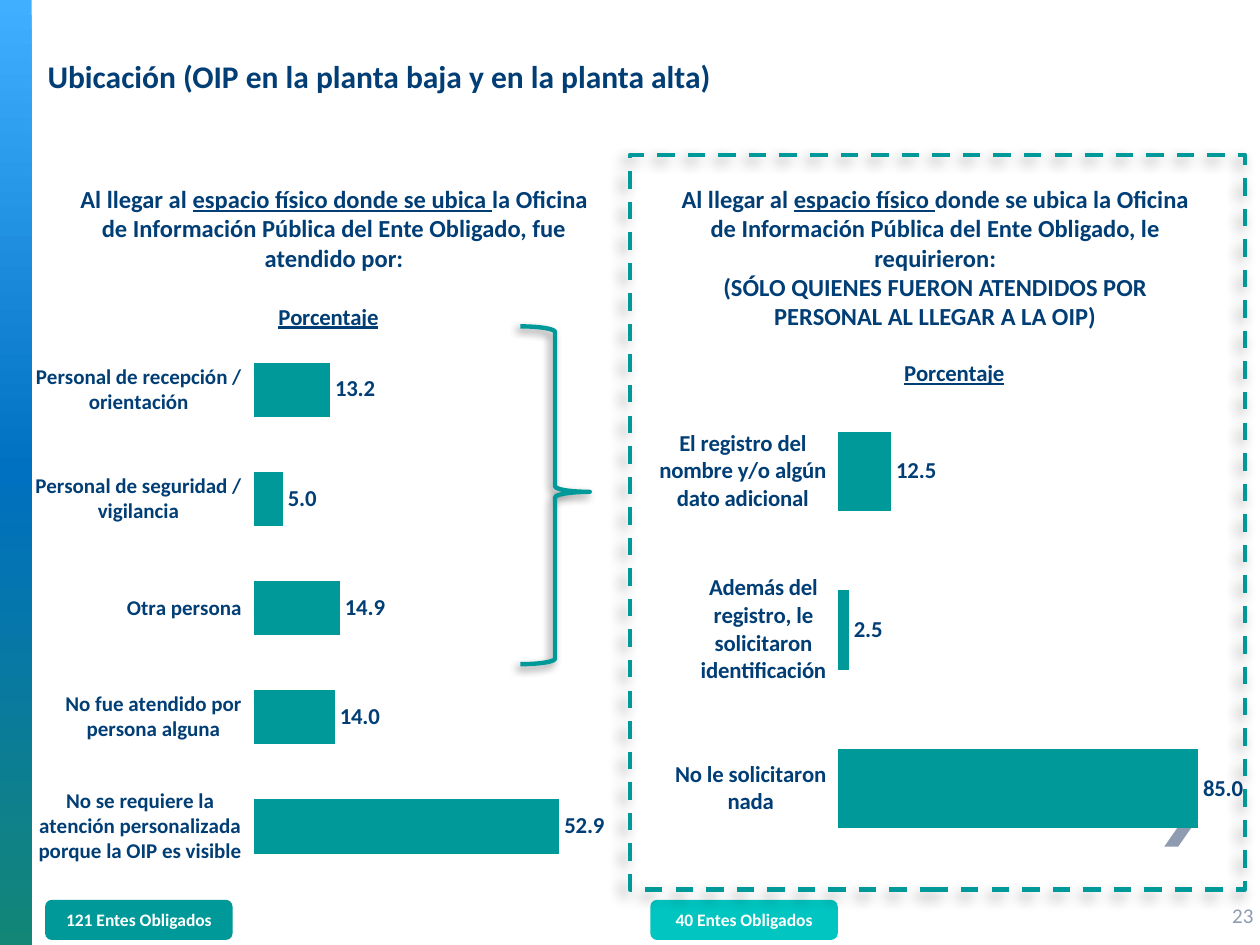
import dataclasses

import pptx
import pptx.chart.data
import pptx.dml.color
import pptx.enum.chart
import pptx.enum.dml
import pptx.enum.shapes
import pptx.enum.text
import pptx.oxml
import pptx.oxml.ns
import pptx.util

Cm = pptx.util.Cm
Pt = pptx.util.Pt
SHAPE = pptx.enum.shapes.MSO_SHAPE
ALIGN = pptx.enum.text.PP_ALIGN
MIDDLE = pptx.enum.text.MSO_ANCHOR.MIDDLE


@dataclasses.dataclass(frozen=True)
class Theme:
    font: str = "Calibri"
    navy: str = "003E75"
    teal: str = "009999"
    aqua: str = "00C5C0"
    grey: str = "8E9BB0"
    white: str = "FFFFFF"
    band: tuple = ((0, "40AFFF"), (50, "0070C0"), (100, "138677"))
    title_size: int = 18
    question_size: int = 14
    value_size: int = 13
    number_size: int = 12
    pill_size: int = 10
    outline: float = 2.5


THEME = Theme()


def rgb(color):
    return pptx.dml.color.RGBColor.from_string(color)


def xml(markup):
    """Parse markup whose root tag ends with the marker NS."""
    return pptx.oxml.parse_xml(markup.replace("NS", pptx.oxml.ns.nsdecls("a", "c"), 1))


def style_font(font, size, color=THEME.navy, bold=True):
    font.name = THEME.font
    font.size = Pt(size)
    font.bold = bold
    font.color.rgb = rgb(color)


def write_paragraph(paragraph, runs, size, color=THEME.navy, bold=True, align=ALIGN.LEFT):
    """Write (text, underlined) runs that share one font."""
    paragraph.alignment = align
    style_font(paragraph.font, size, color, bold)
    for text, underlined in runs:
        run = paragraph.add_run()
        run.text = text
        if underlined:
            run.font.underline = True


def add_text(slide, box, paragraphs, size, anchor=None, side_inset=0.25, **style):
    frame = slide.shapes.add_textbox(*map(Cm, box)).text_frame
    frame.word_wrap = True
    frame.margin_left = frame.margin_right = Cm(side_inset)
    if anchor is not None:
        frame.vertical_anchor = anchor
    for index, runs in enumerate(paragraphs):
        paragraph = frame.add_paragraph() if index else frame.paragraphs[0]
        write_paragraph(paragraph, runs, size, **style)


def add_side_band(slide):
    band = slide.shapes.add_shape(SHAPE.RECTANGLE, 0, 0, Cm(0.64), Cm(19.05))
    band.shadow.inherit = False
    band.line.fill.background()
    band.fill.gradient()
    band.fill.gradient_angle = 270
    stops = band._element.spPr.find(".//" + pptx.oxml.ns.qn("a:gsLst"))
    for stop in list(stops):
        stops.remove(stop)
    for position, color in THEME.band:
        stops.append(xml(f'<a:gs NS pos="{position * 1000}"><a:srgbClr val="{color}"/></a:gs>'))


def add_chevron(slide):
    outline = [(23.75, 15.88), (23.47, 15.88), (23.88, 16.48), (23.47, 17.07),
               (23.75, 17.07), (24.16, 16.48)]
    start, *others = [(Cm(x), Cm(y)) for x, y in outline]
    builder = slide.shapes.build_freeform(*start)
    builder.add_line_segments(others, close=True)
    chevron = builder.convert_to_shape()
    chevron.shadow.inherit = False
    chevron.fill.solid()
    chevron.fill.fore_color.rgb = rgb(THEME.grey)
    chevron.line.fill.background()


def add_outline(slide, kind, box, alpha, blur, distance):
    """Add an unfilled teal shape with a shadow towards the lower left."""
    shape = slide.shapes.add_shape(kind, *map(Cm, box))
    shape.fill.background()
    shape.line.color.rgb = rgb(THEME.teal)
    shape.line.width = Pt(THEME.outline)
    shape.shadow.inherit = False
    effects = shape._element.spPr.find(pptx.oxml.ns.qn("a:effectLst"))
    effects.append(xml(
        f'<a:outerShdw NS blurRad="{Pt(blur)}" dist="{Pt(distance)}" dir="8100000" '
        f'algn="tr" rotWithShape="0"><a:srgbClr val="000000">'
        f'<a:alpha val="{alpha * 1000}"/></a:srgbClr></a:outerShdw>'))
    return shape


def add_pill(slide, left, text, color):
    pill = slide.shapes.add_shape(
        SHAPE.ROUNDED_RECTANGLE, Cm(left), Cm(18.14), Cm(3.78), Cm(0.81))
    pill.shadow.inherit = False
    pill.fill.solid()
    pill.fill.fore_color.rgb = rgb(color)
    pill.line.fill.background()
    pill.text_frame.vertical_anchor = MIDDLE
    write_paragraph(pill.text_frame.paragraphs[0], [(text, False)],
                    THEME.pill_size, THEME.white, align=ALIGN.CENTER)


def place_plot(chart, fractions):
    """Fix the inner plot area and leave the chart background clear."""
    plot_area = chart._chartSpace.chart.plotArea
    for layout in plot_area.findall(pptx.oxml.ns.qn("c:layout")):
        plot_area.remove(layout)
    sizes = "".join(f'<c:{tag} val="{value}"/>' for tag, value in zip("xywh", fractions))
    plot_area.insert(0, xml(
        '<c:layout NS><c:manualLayout><c:layoutTarget val="inner"/>'
        f'<c:xMode val="edge"/><c:yMode val="edge"/>{sizes}</c:manualLayout></c:layout>'))
    chart._chartSpace.chart.addnext(xml(
        '<c:spPr NS><a:noFill/><a:ln><a:noFill/></a:ln></c:spPr>'))


def add_percent_chart(slide, box, answers, plot_fractions, maximum, category_size):
    data = pptx.chart.data.CategoryChartData(number_format="###0.0")
    data.categories = [answer for answer, _ in answers]
    data.add_series("Porcentaje", [percent for _, percent in answers])
    chart = slide.shapes.add_chart(
        pptx.enum.chart.XL_CHART_TYPE.BAR_CLUSTERED, *map(Cm, box), data).chart
    style_font(chart.font, THEME.value_size)
    chart.has_legend = False
    chart.has_title = True
    heading = chart.chart_title.text_frame.paragraphs[0]
    write_paragraph(heading, [("Porcentaje", True)], THEME.value_size, align=ALIGN.CENTER)
    chart.chart_title.include_in_layout = False
    place_plot(chart, plot_fractions)

    chart.category_axis.format.line.fill.background()
    style_font(chart.category_axis.tick_labels.font, category_size)
    percent_axis = chart.value_axis
    percent_axis.minimum_scale = 0
    percent_axis.maximum_scale = maximum
    percent_axis.has_major_gridlines = False
    percent_axis.visible = False

    plot = chart.plots[0]
    plot.gap_width = 100
    plot.vary_by_categories = False
    bars = plot.series[0].format
    bars.fill.solid()
    bars.fill.fore_color.rgb = rgb(THEME.teal)
    plot.has_data_labels = True
    labels = plot.data_labels
    labels.show_value = True
    labels.number_format = "###0.0"
    labels.number_format_is_linked = False
    labels.position = pptx.enum.chart.XL_LABEL_POSITION.OUTSIDE_END
    style_font(labels.font, THEME.value_size)


def main():
    deck = pptx.Presentation()
    deck.slide_width, deck.slide_height = Cm(25.4), Cm(19.05)
    slide = deck.slides.add_slide(deck.slide_layouts[6])

    add_side_band(slide)
    add_chevron(slide)
    add_text(slide, (24.84, 17.93, 0.56, 1.02), [[("23", False)]], THEME.number_size,
             anchor=MIDDLE, side_inset=0, color=THEME.grey, bold=False)
    add_text(slide, (0.71, 0.33, 23.6, 2.39),
             [[("Ubicación (OIP en la planta baja y en la planta alta)", False)]],
             THEME.title_size, anchor=MIDDLE)

    add_text(slide, (1.17, 3.58, 11.13, 2.06), [[
        ("Al llegar al ", False), ("espacio físico donde se ubica ", True),
        ("la Oficina de Información Pública del Ente Obligado, fue atendido por:", False),
    ]], THEME.question_size, align=ALIGN.CENTER)
    add_percent_chart(slide, (0.71, 5.61, 11.81, 12.5), [
        ("No se requiere la atención personalizada porque la OIP es visible", 52.9),
        ("No fue atendido por persona alguna", 14.0),
        ("Otra persona", 14.9),
        ("Personal de seguridad / vigilancia", 5.0),
        ("Personal de recepción / orientación", 13.2),
    ], (0.373, 0.092, 0.592, 0.88), maximum=60, category_size=12)

    add_percent_chart(slide, (13.28, 6.78, 11.91, 10.92), [
        ("No le solicitaron nada", 85.0),
        ("Además del registro, le solicitaron identificación", 2.5),
        ("El registro del nombre y/o algún dato adicional", 12.5),
    ], (0.304, 0.103, 0.645, 0.879), maximum=90, category_size=13)
    add_text(slide, (13.23, 3.58, 11.25, 3.25), [[
        ("Al llegar al ", False), ("espacio físico ", True),
        ("donde se ubica la Oficina de Información Pública del Ente Obligado, "
         "le requirieron:", False),
    ], [
        ("(SÓLO QUIENES FUERON ATENDIDOS POR PERSONAL AL LLEGAR A LA OIP)", False),
    ]], THEME.question_size, align=ALIGN.CENTER)

    add_pill(slide, 0.91, "121 Entes Obligados", THEME.teal)
    add_pill(slide, 13.11, "40 Entes Obligados", THEME.aqua)
    brace = add_outline(slide, SHAPE.RIGHT_BRACE, (10.49, 6.58, 1.4, 6.81), 45, 5, 3)
    brace.adjustments[0], brace.adjustments[1] = 0.08, 0.49
    frame = add_outline(slide, SHAPE.RECTANGLE, (12.7, 3.12, 12.4, 14.81), 40, 8, 5)
    frame.line.dash_style = pptx.enum.dml.MSO_LINE.DASH

    deck.save("out.pptx")


if __name__ == "__main__":
    main()
